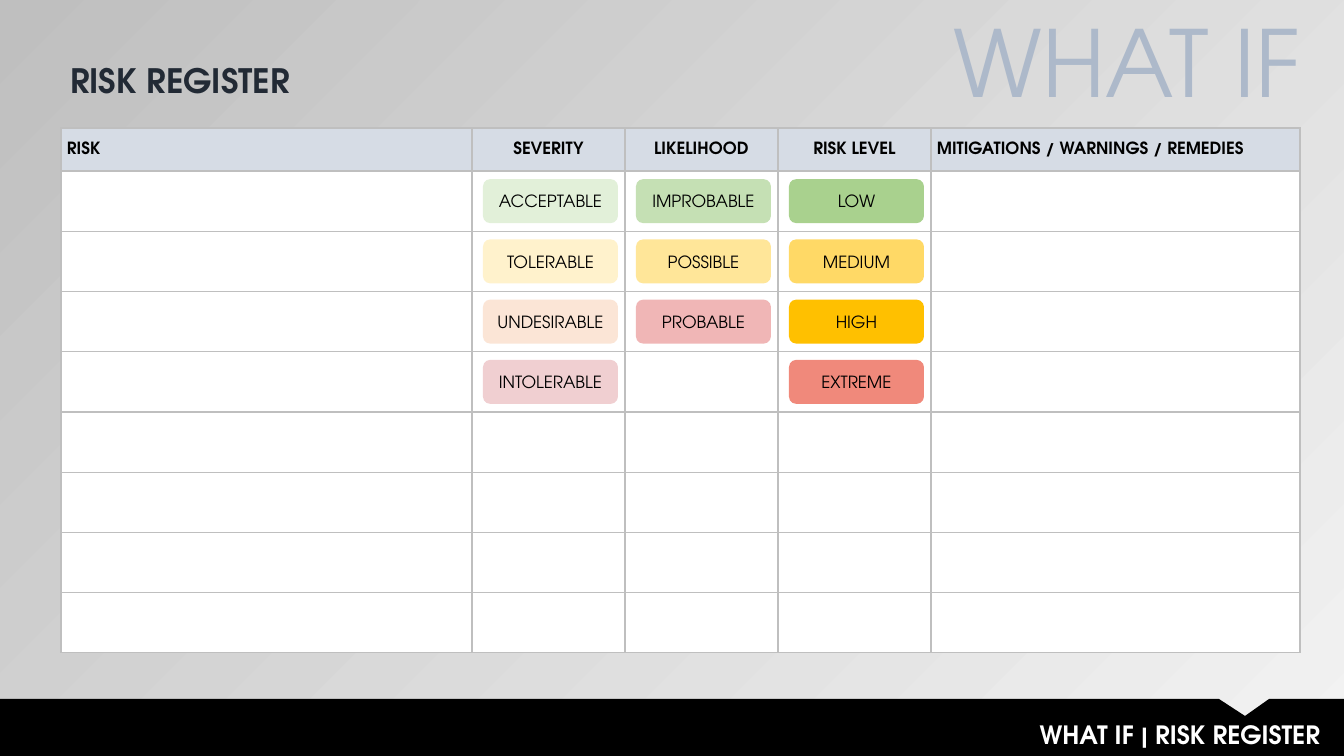
from lxml import etree
from pptx import Presentation
from pptx.dml.color import RGBColor
from pptx.enum import shapes, text
from pptx.oxml import ns
from pptx.util import Pt

FONT = "TeX Gyre Adventor"
BLACK = RGBColor(0, 0, 0)
WHITE = RGBColor(255, 255, 255)
NAVY = RGBColor(0x22, 0x2A, 0x35)
STEEL = RGBColor(0xAD, 0xB9, 0xCA)
HEADER_BLUE = RGBColor(0xD6, 0xDC, 0xE5)
GRID_GREY = RGBColor(0xBF, 0xBF, 0xBF)
PALE_GREY = RGBColor(0xF2, 0xF2, 0xF2)

LEFT, CENTER, RIGHT = text.PP_ALIGN.LEFT, text.PP_ALIGN.CENTER, text.PP_ALIGN.RIGHT
TITLE = ("RISK REGISTER", (60, 55, 897, 50), 24, NAVY, True, LEFT)
LABELS = [
    ("WHAT IF | RISK REGISTER", (417, 714, 913, 40), 18, WHITE, True, RIGHT),
    ("WHAT IF", (916, 0, 394, 122), 66, STEEL, False, RIGHT),
]
COLUMNS = [
    ("RISK", 411, LEFT),
    ("SEVERITY", 153, CENTER),
    ("LIKELIHOOD", 153, CENTER),
    ("RISK LEVEL", 153, CENTER),
    ("MITIGATIONS / WARNINGS / REMEDIES", 369, LEFT),
]
RATINGS = {
    "SEVERITY": [("ACCEPTABLE", RGBColor(0xE2, 0xF0, 0xD9)),
                 ("TOLERABLE", RGBColor(0xFF, 0xF2, 0xCC)),
                 ("UNDESIRABLE", RGBColor(0xFB, 0xE5, 0xD6)),
                 ("INTOLERABLE", RGBColor(0xF0, 0xCF, 0xD1))],
    "LIKELIHOOD": [("IMPROBABLE", RGBColor(0xC5, 0xE0, 0xB4)),
                   ("POSSIBLE", RGBColor(0xFF, 0xE6, 0x99)),
                   ("PROBABLE", RGBColor(0xF0, 0xB6, 0xB6))],
    "RISK LEVEL": [("LOW", RGBColor(0xA9, 0xD1, 0x8E)),
                   ("MEDIUM", RGBColor(0xFF, 0xD9, 0x66)),
                   ("HIGH", RGBColor(0xFF, 0xC0, 0x00)),
                   ("EXTREME", RGBColor(0xF0, 0x89, 0x7B))],
}
FOOTER = [(0, 699), (1219, 699), (1245, 716), (1269, 699),
          (1344, 699), (1344, 756), (0, 756)]
TABLE_LEFT, TABLE_TOP, HEADER_HEIGHT, BODY_HEIGHT, BODY_ROWS = 61, 128, 43, 482, 8
RATING_WIDTH, RATING_HEIGHT, RATING_INDENT = 135, 44, 11
SCALE = 914400 / 100.8


def px(length):
    return round(length * SCALE)


def write(frame, words, size, color, bold=False, align=LEFT):
    frame.text = words
    paragraph = frame.paragraphs[0]
    paragraph.alignment = align
    font = paragraph.runs[0].font
    font.name, font.size, font.bold = FONT, Pt(size), bold
    font.color.rgb = color
    return paragraph


def place_label(label, words, box, size, color, bold, align):
    label.left, label.top, label.width, label.height = map(px, box)
    label.text_frame.word_wrap = True
    label.text_frame.vertical_anchor = text.MSO_ANCHOR.TOP
    write(label.text_frame, words, size, color, bold, align)


def paint(shape, color):
    shape.shadow.inherit = False
    shape.fill.solid()
    shape.fill.fore_color.rgb = color
    shape.line.fill.background()


def style_cell(cell, color):
    cell.fill.solid()
    cell.fill.fore_color.rgb = color
    properties = cell._tc.get_or_add_tcPr()
    for order, side in enumerate(("lnL", "lnR", "lnT", "lnB")):
        border = etree.Element(ns.qn("a:" + side), w=str(Pt(1)))
        fill = etree.SubElement(border, ns.qn("a:solidFill"))
        etree.SubElement(fill, ns.qn("a:srgbClr"), val=str(GRID_GREY))
        properties.insert(order, border)


def add_footer(slide):
    start, *rest = FOOTER
    outline = slide.shapes.build_freeform(*start, scale=SCALE)
    outline.add_line_segments(rest, close=True)
    paint(outline.convert_to_shape(), BLACK)


def add_register(slide):
    width = sum(column[1] for column in COLUMNS)
    register = slide.shapes.add_table(
        BODY_ROWS + 1, len(COLUMNS), px(TABLE_LEFT), px(TABLE_TOP),
        px(width), px(HEADER_HEIGHT + BODY_HEIGHT)).table
    for index, row in enumerate(register.rows):
        row.height = px(BODY_HEIGHT / BODY_ROWS if index else HEADER_HEIGHT)
        for cell in row.cells:
            style_cell(cell, WHITE if index else HEADER_BLUE)
    for index, (heading, width, align) in enumerate(COLUMNS):
        register.columns[index].width = px(width)
        cell = register.cell(0, index)
        cell.margin_left = cell.margin_right = px(6)
        cell.margin_top = cell.margin_bottom = 0
        cell.vertical_anchor = text.MSO_ANCHOR.MIDDLE
        write(cell.text_frame, heading, 12, BLACK, True, align).line_spacing = 1.07


def add_ratings(slide):
    pitch = BODY_HEIGHT / BODY_ROWS
    first_top = TABLE_TOP + HEADER_HEIGHT + (pitch - RATING_HEIGHT) / 2
    column_left = TABLE_LEFT
    for heading, width, _ in COLUMNS:
        for row, (rating, color) in enumerate(RATINGS.get(heading, [])):
            pill = slide.shapes.add_shape(
                shapes.MSO_SHAPE.ROUNDED_RECTANGLE, px(column_left + RATING_INDENT),
                px(first_top + row * pitch), px(RATING_WIDTH), px(RATING_HEIGHT))
            paint(pill, color)
            pill.text_frame.vertical_anchor = text.MSO_ANCHOR.MIDDLE
            write(pill.text_frame, rating, 12, BLACK, align=CENTER)
        column_left += width


def main():
    deck = Presentation()
    deck.slide_width, deck.slide_height = px(1344), px(756)
    slide = deck.slides.add_slide(deck.slide_layouts[5])
    backdrop = slide.background.fill
    backdrop.gradient()
    backdrop.gradient_angle = 135
    for stop, color in zip(backdrop.gradient_stops, (PALE_GREY, GRID_GREY)):
        stop.color.rgb = color
    add_footer(slide)
    place_label(slide.shapes.title, *TITLE)
    for label in LABELS:
        place_label(slide.shapes.add_textbox(0, 0, 0, 0), *label)
    add_register(slide)
    add_ratings(slide)
    deck.save("out.pptx")


if __name__ == "__main__":
    main()
